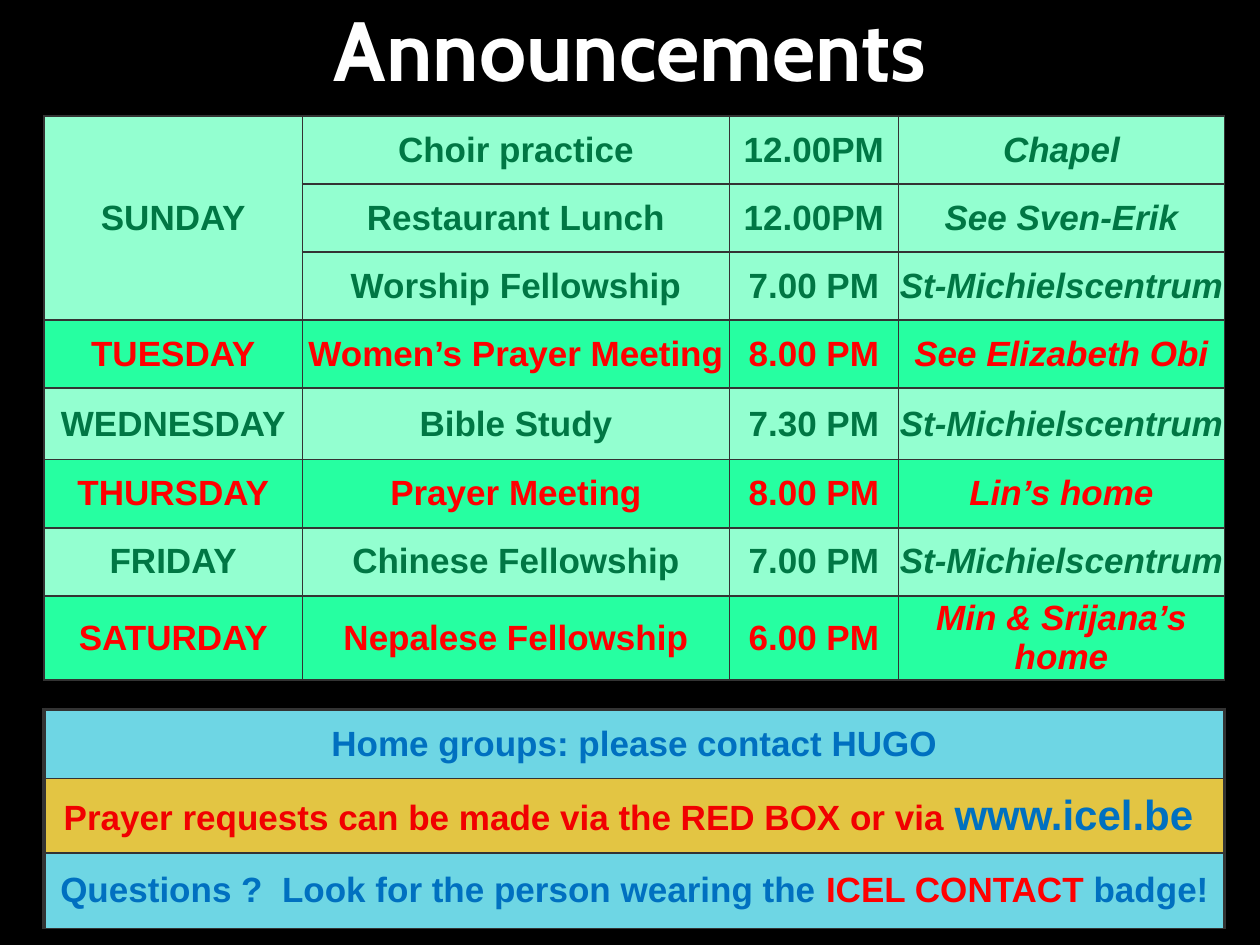
from dataclasses import dataclass
from lxml.etree import SubElement
from pptx import Presentation
from pptx.dml.color import RGBColor as RGB
from pptx.enum.text import MSO_ANCHOR as Anchor, MSO_AUTO_SIZE as AutoSize, PP_ALIGN as Align
from pptx.oxml.ns import qn
from pptx.util import Inches, Pt


@dataclass(frozen=True)
class Theme:
    back: str = "000000"
    white: str = "FFFFFF"
    green: str = "007744"
    red: str = "FF0000"
    box_red: str = "F10000"
    blue: str = "0070C0"
    mint: str = "93FFD0"
    emerald: str = "26FFA1"
    sky: str = "6ED6E4"
    gold: str = "E3C543"
    line: str = "333333"
    title_font: str = "Cabin"
    body_font: str = "Arial"
    title_size: int = 48
    body_size: int = 20
    link_size: int = 24
    thin: float = 1
    thick: float = 2.25


class Board:
    COLUMNS, ROWS = 100, 75

    def __init__(self, prs, theme):
        self.theme = theme
        self.dx = prs.slide_width / self.COLUMNS
        self.dy = prs.slide_height / self.ROWS
        self.s = prs.slides.add_slide(prs.slide_layouts[5])
        fill = self.s.background.fill
        fill.solid()
        fill.fore_color.rgb = RGB.from_string(theme.back)

    def x(self, columns):
        return round(columns * self.dx)

    def y(self, rows):
        return round(rows * self.dy)

    def style(self, r, color, size=None, italic=False, font=None):
        f = r.font
        f.name = font or self.theme.body_font
        f.size = Pt(size or self.theme.body_size)
        f.bold, f.italic = True, italic
        f.color.rgb = RGB.from_string(color)

    def title(self, text, left, top, width, height):
        sp = self.s.shapes.title
        sp.left, sp.top = self.x(left), self.y(top)
        sp.width, sp.height = self.x(width), self.y(height)
        tf = sp.text_frame
        tf.text = text
        tf.auto_size = AutoSize.NONE
        tf.vertical_anchor = Anchor.MIDDLE
        p = tf.paragraphs[0]
        p.alignment = Align.CENTER
        self.style(p.runs[0], self.theme.white, self.theme.title_size,
                   font=self.theme.title_font)

    def table(self, left, top, widths, heights):
        frame = self.s.shapes.add_table(
            len(heights), len(widths), self.x(left), self.y(top),
            self.x(sum(widths)), self.y(sum(heights)))
        tbl = frame.table
        tbl.first_row = tbl.horz_banding = False
        for column, width in zip(tbl.columns, widths):
            column.width = self.x(width)
        for row, height in zip(tbl.rows, heights):
            row.height = self.y(height)
        return tbl

    def borders(self, cell, left, right, top, bottom):
        tc_pr = cell._tc.get_or_add_tcPr()
        for side, width in zip("LRTB", (left, right, top, bottom)):
            ln = SubElement(tc_pr, qn(f"a:ln{side}"), w=str(Pt(width)))
            fill = SubElement(ln, qn("a:solidFill"))
            SubElement(fill, qn("a:srgbClr"), val=self.theme.line)

    def cell(self, cell, runs, fill, widths, inset=(0, 0)):
        self.borders(cell, *widths)
        cell.fill.solid()
        cell.fill.fore_color.rgb = RGB.from_string(fill)
        cell.vertical_anchor = Anchor.MIDDLE
        cell.margin_left = cell.margin_right = Inches(inset[0])
        cell.margin_top = cell.margin_bottom = Inches(inset[1])
        p = cell.text_frame.paragraphs[0]
        p.alignment = Align.CENTER
        for text, *look in runs:
            r = p.add_run()
            r.text = text
            self.style(r, *look)

    def schedule(self, left, top, widths, heights, rows):
        t = self.theme
        tbl = self.table(left, top, widths, heights)
        days = [row[0] for row in rows]
        accents = ("TUESDAY", "THURSDAY", "SATURDAY")
        for i, row in enumerate(rows):
            color, fill = (t.red, t.emerald) if row[0] in accents else (t.green, t.mint)
            for j, text in enumerate(row):
                repeated = j == 0 and text in days[:i]
                runs = [] if repeated else [(text, color, t.body_size, j == 3)]
                self.cell(tbl.cell(i, j), runs, fill, [t.thin] * 4)
        last_sunday = days.count(days[0]) - 1
        tbl.cell(0, 0).merge(tbl.cell(last_sunday, 0))

    def notices(self, left, top, width, heights, rows):
        t = self.theme
        tbl = self.table(left, top, [width], heights)
        for i, (fill, runs) in enumerate(rows):
            edge = t.thin if i else t.thick
            self.cell(tbl.cell(i, 0), runs, fill,
                      (t.thick, t.thick, edge, t.thin), (0.1, 0.05))


SCHEDULE = [
    ("SUNDAY", "Choir practice", "12.00PM", "Chapel"),
    ("SUNDAY", "Restaurant Lunch", "12.00PM", "See Sven-Erik"),
    ("SUNDAY", "Worship Fellowship", "7.00 PM", "St-Michielscentrum"),
    ("TUESDAY", "Women’s Prayer Meeting", "8.00 PM", "See Elizabeth Obi"),
    ("WEDNESDAY", "Bible Study", "7.30 PM", "St-Michielscentrum"),
    ("THURSDAY", "Prayer Meeting", "8.00 PM", "Lin’s home"),
    ("FRIDAY", "Chinese Fellowship", "7.00 PM", "St-Michielscentrum"),
    ("SATURDAY", "Nepalese Fellowship", "6.00 PM", "Min & Srijana’s home"),
]


def main():
    t = Theme()
    prs = Presentation()
    prs.slide_width, prs.slide_height = Inches(10), Inches(7.5)
    board = Board(prs, t)
    board.title("Announcements", 5, -0.7, 90, 9)
    widths = [20.5, 33.9, 13.4, 25.9]
    board.schedule(3.5, 9.2, widths, [5.4] * 4 + [5.7] + [5.4] * 2 + [6.7], SCHEDULE)
    board.notices(3.5, 56.3, sum(widths), [5.5, 5.9, 6], [
        (t.sky, [("Home groups: please contact HUGO", t.blue)]),
        (t.gold, [("Prayer requests can be made via the RED BOX or via ", t.box_red),
                  ("www.icel.be ", t.blue, t.link_size)]),
        (t.sky, [("Questions ?  Look for the person wearing the", t.blue),
                 (" ICEL CONTACT ", t.red),
                 ("badge!", t.blue)]),
    ])
    prs.save("out.pptx")


if __name__ == "__main__":
    main()
